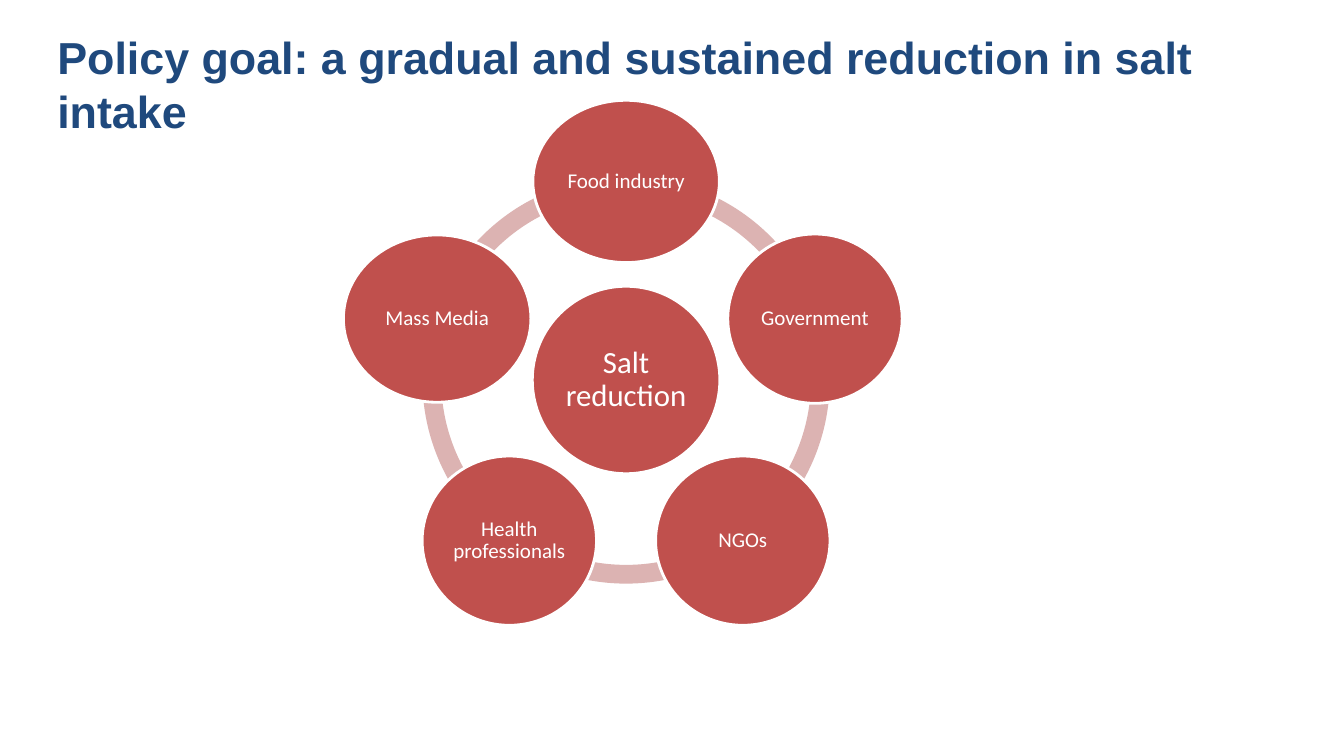
from dataclasses import dataclass
from math import cos, radians, sin

from pptx import Presentation
from pptx.dml.color import RGBColor
from pptx.enum.shapes import MSO_SHAPE as Shape
from pptx.enum.text import MSO_ANCHOR as Anchor, MSO_AUTO_SIZE as AutoSize, PP_ALIGN as Align
from pptx.shapes.autoshape import Shape as AutoShape
from pptx.slide import Slide
from pptx.text.text import TextFrame
from pptx.util import Inches, Pt


@dataclass(frozen=True)
class Theme:
    title_color: RGBColor = RGBColor(0x1F, 0x49, 0x7D)
    node: RGBColor = RGBColor(0xC0, 0x50, 0x4D)
    ring: RGBColor = RGBColor(0xDC, 0xB3, 0xB2)
    white: RGBColor = RGBColor(0xFF, 0xFF, 0xFF)
    title_font: str = "Arial"
    node_font: str = "Calibri"
    title_size: int = 32
    hub_size: int = 22
    node_size: int = 15
    outline: int = 2


@dataclass(frozen=True)
class Node:
    label: str
    width: float
    height: float


THEME = Theme()
CENTER_X, CENTER_Y = 6.21, 3.77
ORBIT = 1.97
RING_SIZE = 4.04
RING_THICKNESS = 0.046
HUB = Node("Salt reduction", 1.86, 1.86)
ACTORS = [
    Node("Food industry", 1.85, 1.61),
    Node("Government", 1.73, 1.68),
    Node("NGOs", 1.73, 1.68),
    Node("Health professionals", 1.73, 1.68),
    Node("Mass Media", 1.86, 1.66),
]
STEP = 360 / len(ACTORS)


def write(frame: TextFrame, text: str, *, font: str, size: int, color: RGBColor,
          bold: bool = False, align: Align = Align.LEFT, spacing: float = 1.0) -> None:
    frame.word_wrap = True
    para = frame.paragraphs[0]
    para.alignment = align
    para.line_spacing = spacing
    span = para.add_run()
    span.text = text
    span.font.name = font
    span.font.size = Pt(size)
    span.font.bold = bold
    span.font.color.rgb = color


def add_centered(page: Slide, kind: Shape, x: float, y: float,
                 width: float, height: float, fill: RGBColor) -> AutoShape:
    """Add a flat, borderless shape whose middle is at x, y."""
    shape = page.shapes.add_shape(kind, Inches(x - width / 2), Inches(y - height / 2),
                                  Inches(width), Inches(height))
    shape.shadow.inherit = False
    shape.fill.solid()
    shape.fill.fore_color.rgb = fill
    shape.line.fill.background()
    return shape


def add_ring_segment(page: Slide, start: float) -> None:
    """Add one arc of the ring, clockwise from start degrees."""
    arc = add_centered(page, Shape.BLOCK_ARC, CENTER_X, CENTER_Y, RING_SIZE, RING_SIZE, THEME.ring)
    # Angle adjustments count 0.6 for each degree.
    arc.adjustments[0] = start % 360 * 0.6
    arc.adjustments[1] = (start + STEP) % 360 * 0.6
    arc.adjustments[2] = RING_THICKNESS


def add_node(page: Slide, node: Node, x: float, y: float, size: int, inset: float) -> None:
    oval = add_centered(page, Shape.OVAL, x, y, node.width, node.height, THEME.node)
    oval.line.color.rgb = THEME.white
    oval.line.width = Pt(THEME.outline)
    frame = oval.text_frame
    frame.vertical_anchor = Anchor.MIDDLE
    frame.margin_left = frame.margin_right = Inches(inset)
    frame.margin_top = frame.margin_bottom = Inches(inset)
    write(frame, node.label, font=THEME.node_font, size=size, color=THEME.white,
          align=Align.CENTER, spacing=0.9)


def add_title(page: Slide, text: str) -> None:
    box = page.shapes.add_textbox(Inches(0.47), Inches(0.25), Inches(11.67), Inches(1.18))
    box.text_frame.auto_size = AutoSize.SHAPE_TO_FIT_TEXT
    write(box.text_frame, text, font=THEME.title_font, size=THEME.title_size,
          color=THEME.title_color, bold=True)


def main() -> None:
    deck = Presentation()
    deck.slide_width, deck.slide_height = Inches(13.33), Inches(7.5)
    page = deck.slides.add_slide(deck.slide_layouts[6])

    add_title(page, "Policy goal: a gradual and sustained reduction in salt intake")
    angles = [-90 + STEP * index for index in range(len(ACTORS))]
    for angle in angles:
        add_ring_segment(page, angle)
    add_node(page, HUB, CENTER_X, CENTER_Y, THEME.hub_size, 0.03)
    for actor, angle in zip(ACTORS, angles):
        x = CENTER_X + ORBIT * cos(radians(angle))
        y = CENTER_Y + ORBIT * sin(radians(angle))
        add_node(page, actor, x, y, THEME.node_size, 0.02)

    deck.save("out.pptx")


if __name__ == "__main__":
    main()
